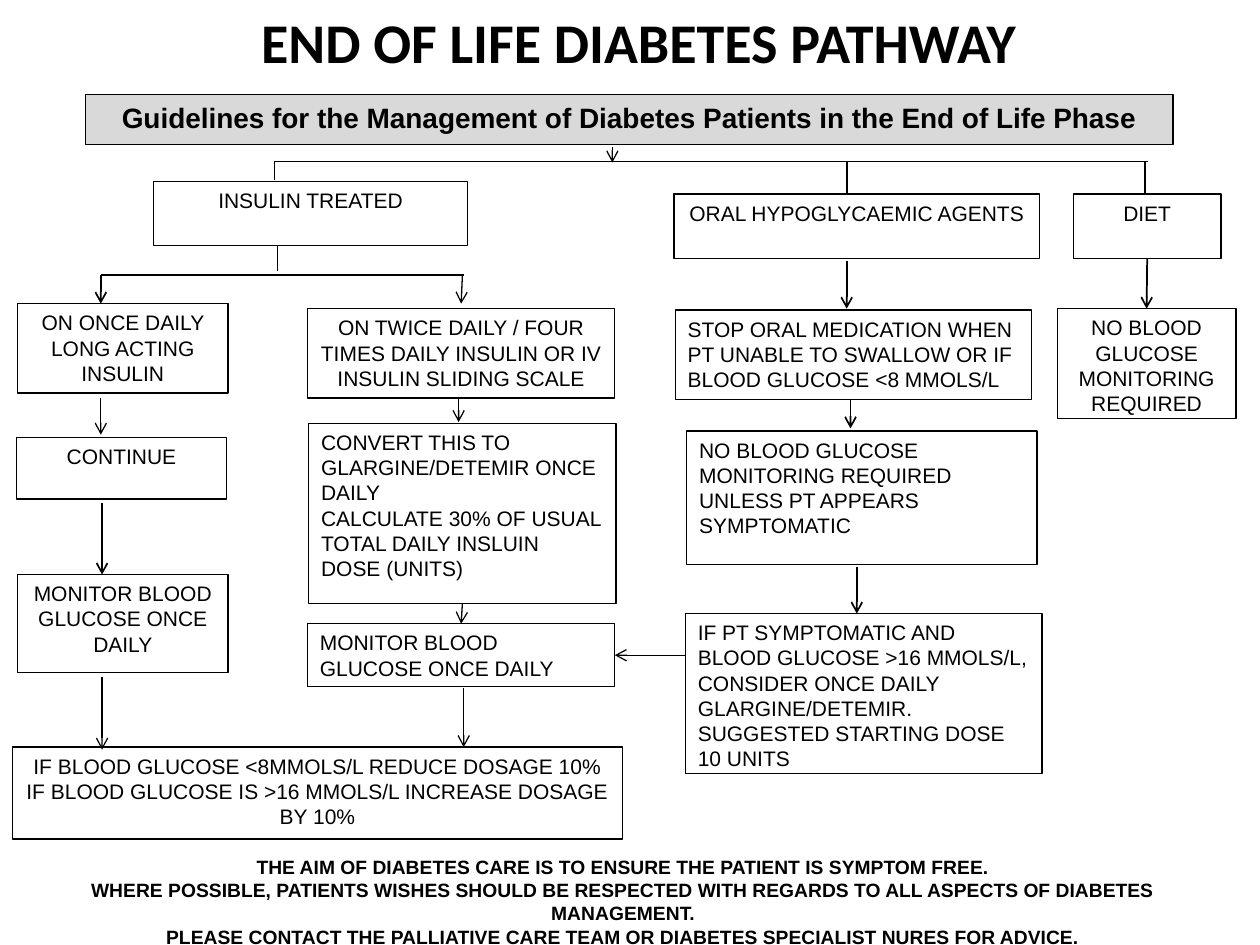
from lxml.etree import SubElement
from pptx import Presentation
from pptx.dml.color import RGBColor
from pptx.enum.shapes import MSO_CONNECTOR, MSO_SHAPE
from pptx.enum.text import MSO_ANCHOR, PP_ALIGN
from pptx.oxml.ns import qn
from pptx.util import Inches, Pt


def color(hex_string):
    return RGBColor.from_string(hex_string)


def write_text(shape, lines, size, alignment, font="Arial", bold=False):
    frame = shape.text_frame
    frame.word_wrap = True
    frame.vertical_anchor = MSO_ANCHOR.TOP
    frame.text = "\n".join(lines)
    for paragraph in frame.paragraphs:
        paragraph.alignment = alignment
        paragraph.font.name = font
        paragraph.font.size = Pt(size)
        paragraph.font.bold = bold
        paragraph.font.color.rgb = color("000000")


presentation = Presentation()
presentation.slide_width = Inches(10)
presentation.slide_height = Inches(7.5)
slide = presentation.slides.add_slide(presentation.slide_layouts[6])

CENTER, LEFT = PP_ALIGN.CENTER, PP_ALIGN.LEFT
TOP, BOTTOM, RIGHT_SIDE = 0, 2, 3

# Title
title = slide.shapes.add_textbox(Inches(1.38), Inches(0.01), Inches(7.38), Inches(0.64))
write_text(title, ["END OF LIFE DIABETES PATHWAY"], 32, CENTER, "Calibri", True)

# Boxes: key, left, top, width, height, alignment, lines
boxes = [
    ("guidelines", 0.68, 0.75, 8.63, 0.4, CENTER,
     ["Guidelines for the Management of Diabetes Patients in the End of Life Phase"]),
    # Treatment headings
    ("insulin", 1.22, 1.44, 2.49, 0.51, CENTER, ["INSULIN TREATED"]),
    ("oral", 5.35, 1.54, 2.9, 0.51, CENTER, ["ORAL HYPOGLYCAEMIC AGENTS"]),
    ("diet", 8.52, 1.54, 1.17, 0.51, CENTER, ["DIET"]),
    # Once daily insulin
    ("once daily", 0.14, 2.41, 1.67, 0.71, CENTER, ["ON ONCE DAILY LONG ACTING INSULIN"]),
    ("continue", 0.13, 3.47, 1.67, 0.49, CENTER, ["CONTINUE"]),
    ("monitor once daily", 0.14, 4.56, 1.67, 0.78, CENTER,
     ["MONITOR BLOOD GLUCOSE ONCE DAILY"]),
    # Twice daily insulin
    ("twice daily", 2.44, 2.45, 2.44, 0.71, CENTER,
     ["ON TWICE DAILY / FOUR TIMES DAILY INSULIN OR IV INSULIN SLIDING SCALE"]),
    ("convert", 2.45, 3.36, 2.44, 1.43, LEFT,
     ["CONVERT THIS TO GLARGINE/DETEMIR ONCE DAILY",
      "CALCULATE 30% OF USUAL TOTAL DAILY INSLUIN DOSE (UNITS)"]),
    ("monitor converted", 2.44, 4.95, 2.44, 0.5, LEFT, ["MONITOR BLOOD GLUCOSE ONCE DAILY"]),
    ("adjust dosage", 0.1, 5.93, 4.84, 0.73, CENTER,
     ["IF BLOOD GLUCOSE <8MMOLS/L REDUCE DOSAGE 10%",
      "IF BLOOD GLUCOSE IS >16 MMOLS/L INCREASE DOSAGE BY 10%"]),
    # Oral agents
    ("stop oral", 5.36, 2.46, 2.83, 0.71, LEFT,
     ["STOP ORAL MEDICATION WHEN PT UNABLE TO SWALLOW OR IF BLOOD GLUCOSE <8 MMOLS/L"]),
    ("unless symptomatic", 5.45, 3.42, 2.78, 1.06, LEFT,
     ["NO BLOOD GLUCOSE MONITORING REQUIRED UNLESS PT APPEARS SYMPTOMATIC"]),
    ("symptomatic", 5.44, 4.87, 2.83, 1.27, LEFT,
     ["IF PT SYMPTOMATIC AND BLOOD GLUCOSE >16 MMOLS/L, CONSIDER ONCE DAILY "
      "GLARGINE/DETEMIR. SUGGESTED STARTING DOSE",
      "10 UNITS"]),
    # Diet
    ("no monitoring", 8.39, 2.45, 1.42, 0.87, CENTER, ["NO BLOOD GLUCOSE MONITORING REQUIRED"]),
    # Closing statement
    ("aim", 0.05, 6.74, 9.79, 0.76, CENTER,
     ["THE AIM OF DIABETES CARE IS TO ENSURE THE PATIENT IS SYMPTOM FREE.",
      "WHERE POSSIBLE, PATIENTS WISHES SHOULD BE RESPECTED WITH REGARDS TO ALL "
      "ASPECTS OF DIABETES MANAGEMENT.",
      "PLEASE CONTACT THE PALLIATIVE CARE TEAM OR DIABETES SPECIALIST NURES FOR ADVICE."]),
]
bold_sizes = {"guidelines": 16, "aim": 11}
box_shapes = {}
for key, left, top, width, height, alignment, lines in boxes:
    shape = slide.shapes.add_shape(
        MSO_SHAPE.RECTANGLE, Inches(left), Inches(top), Inches(width), Inches(height))
    shape.shadow.inherit = False
    shape.fill.solid()
    shape.fill.fore_color.rgb = color("D9D9D9" if key == "guidelines" else "FFFFFF")
    if key == "aim":
        shape.line.fill.background()
    else:
        shape.line.color.rgb = color("000000")
        shape.line.width = Pt(0.75)
    write_text(shape, lines, bold_sizes.get(key, 12), alignment, bold=key in bold_sizes)
    box_shapes[key] = shape

# Connectors: from x, y, to x, y, line width, arrow, begin joint, end joint
connectors = [
    # Branches to the three treatments
    (4.86, 1.17, 4.86, 1.29, 0.75, True, None, None),
    (2.18, 1.28, 9.11, 1.28, 0.75, False, None, None),
    (2.18, 1.28, 2.18, 1.43, 0.75, False, None, None),
    (6.72, 1.28, 6.72, 1.53, 1, False, None, None),
    (9.09, 1.28, 9.09, 1.53, 1, False, None, None),
    # Branches to the two insulin regimes
    (2.2, 1.95, 2.2, 2.15, 0.75, False, None, None),
    (0.8, 2.18, 3.68, 2.18, 1, False, None, None),
    (0.8, 2.18, 0.8, 2.41, 1, True, None, None),
    (3.67, 2.19, 3.66, 2.41, 0.75, True, None, None),
    # Once daily insulin
    (0.8, 3.16, 0.8, 3.45, 0.75, True, None, None),
    (0.81, 3.99, 0.81, 4.56, 1, True, None, None),
    (0.81, 5.37, 0.81, 5.95, 0.75, True, None, None),
    # Twice daily insulin
    (3.64, 3.17, 3.64, 3.35, 0.75, True, None, None),
    (3.66, 4.79, 3.66, 4.95, 0.75, True, ("convert", BOTTOM), ("monitor converted", TOP)),
    (3.68, 5.46, 3.68, 5.93, 0.75, True, None, None),
    # Oral agents
    (6.72, 2.07, 6.72, 2.45, 1, True, None, None),
    (6.75, 3.17, 6.75, 3.4, 1, True, None, None),
    (6.8, 4.5, 6.8, 4.87, 1, True, None, None),
    (5.44, 5.2, 4.88, 5.2, 0.75, True, None, ("monitor converted", RIGHT_SIDE)),
    # Diet
    (9.1, 2.05, 9.1, 2.45, 1, True, ("diet", BOTTOM), ("no monitoring", TOP)),
]
for x1, y1, x2, y2, width, arrow, begin, end in connectors:
    connector = slide.shapes.add_connector(
        MSO_CONNECTOR.STRAIGHT, Inches(x1), Inches(y1), Inches(x2), Inches(y2))
    if begin:
        connector.begin_connect(box_shapes[begin[0]], begin[1])
    if end:
        connector.end_connect(box_shapes[end[0]], end[1])
    connector.line.color.rgb = color("000000")
    connector.line.width = Pt(width)
    if arrow:
        SubElement(connector.line._get_or_add_ln(), qn("a:tailEnd"), type="arrow")
    SubElement(connector._element.spPr, qn("a:effectLst"))

presentation.save("out.pptx")
